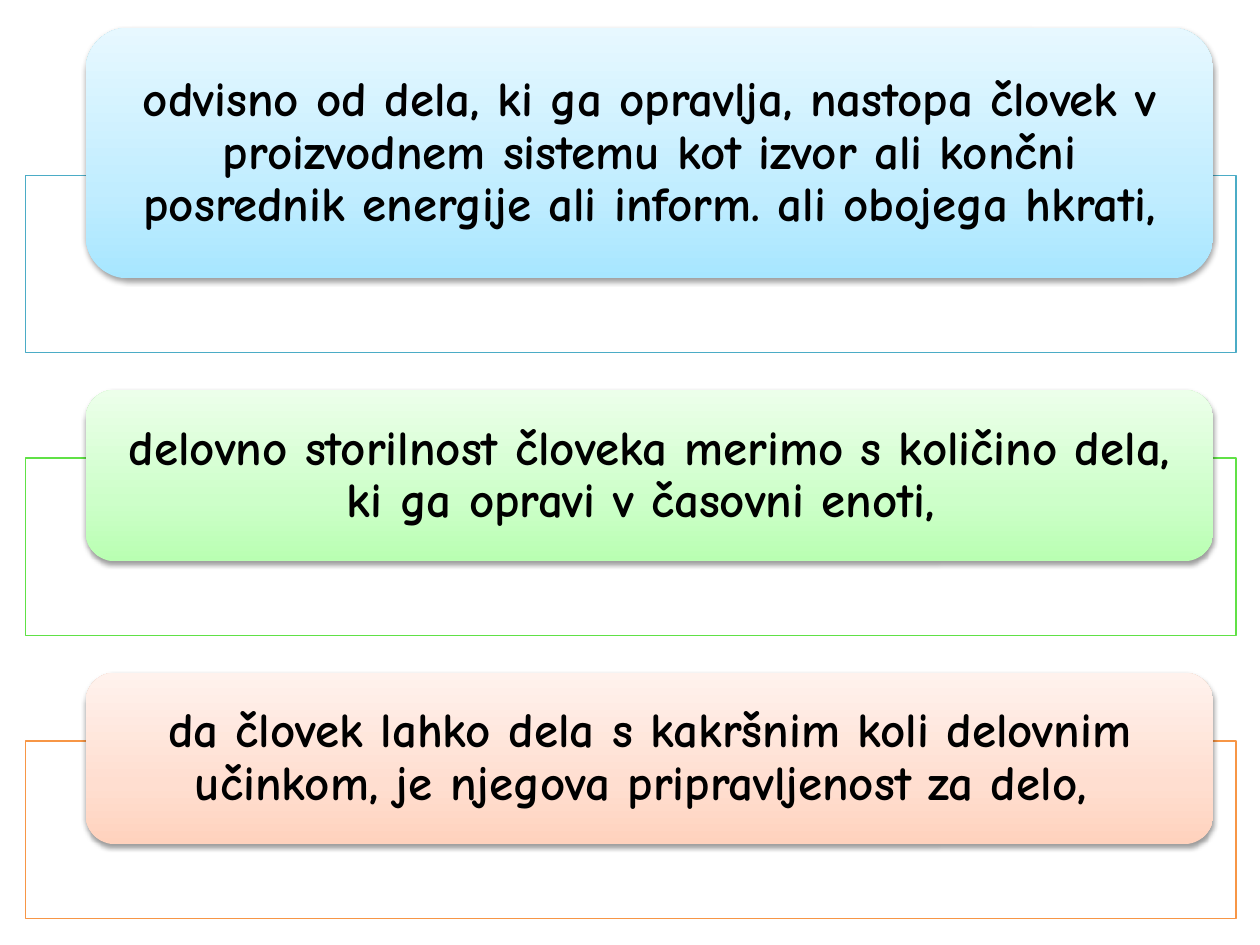
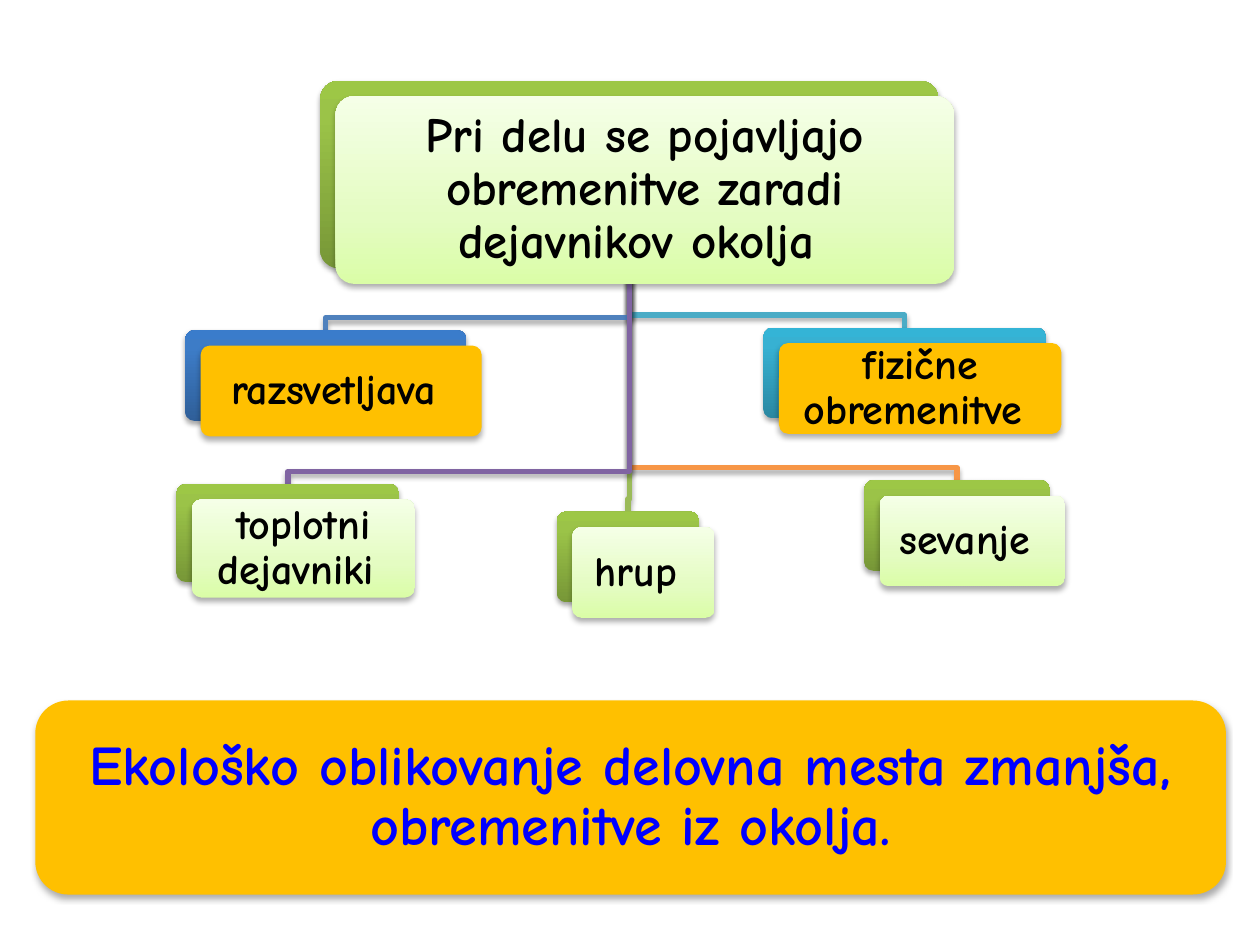
from dataclasses import dataclass
from typing import Optional, Union

import lxml.etree
import pptx
import pptx.dml.color
import pptx.enum.shapes
import pptx.enum.text
import pptx.oxml.ns
import pptx.util

WIDTH, HEIGHT = pptx.util.Inches(10), pptx.util.Inches(7.5)
COLUMN, ROW = WIDTH / 100, HEIGHT / 75
FONT = "Comic Neue"
BLACK, BLUE, WHITE, AMBER = "000000", "0000FF", "FFFFFF", "FFC000"
DEFAULT_CORNER, NODE_CORNER = 0.17, 0.1


@dataclass(frozen=True)
class Box:
    left: float
    top: float
    width: float
    height: float

    @property
    def bottom(self) -> float:
        return self.top + self.height

    @property
    def center(self) -> float:
        return self.left + self.width / 2

    def moved(self, step: float) -> "Box":
        return Box(self.left + step, self.top + step, self.width, self.height)


@dataclass(frozen=True)
class Gradient:
    bottom: str
    middle: str
    top: str
    middle_at: int = 35


@dataclass(frozen=True)
class Shadow:
    opacity: int
    blur: float
    distance: float


@dataclass(frozen=True)
class Caption:
    words: str
    size: int
    side_inset: float
    end_inset: float
    color: str = BLACK


@dataclass(frozen=True)
class Statement:
    words: str
    height: float
    paint: Gradient
    frame_color: str


Paint = Union[str, Gradient]


@dataclass(frozen=True)
class Node:
    box: Box
    caption: Caption
    back: Gradient
    front: Paint
    branch_color: Optional[str] = None


STATEMENT_SHADOW = Shadow(38, 3.1, 1.6)
BACK_SHADOW = Shadow(35, 3.1, 1.8)
FRONT_SHADOW = Shadow(32, 3.5, 2.2)

GREEN_BACK = Gradient("779737", "9BC348", "9DC746", 80)
BLUE_BACK = Gradient("2F5F99", "3D7CC7", "3A7CCB", 80)
TEAL_BACK = Gradient("2A88A2", "37B1D2", "34B4D6", 80)
GREEN_FRONT = Gradient("DAFDA7", "E4FCC2", "F5FFE7")

STATEMENTS = [
    Statement("odvisno od dela, ki ga opravlja, nastopa človek v proizvodnem sistemu kot izvor "
              "ali končni posrednik energije ali inform. ali obojega hkrati,",
              19.9, Gradient("A7E6FF", "C1EDFF", "E7F8FF"), "4BACC6"),
    Statement("delovno storilnost človeka merimo s količino dela, ki ga opravi v časovni enoti, ",
              13.6, Gradient("B9FFB2", "CDFFC9", "ECFFEA"), "60E146"),
    Statement("da človek lahko dela s kakršnim koli delovnim učinkom, je njegova pripravljenost "
              "za delo, ",
              13.6, Gradient("FFD2BD", "FFDED0", "FFF2ED"), "F79646"),
]


def factor(words: str) -> Caption:
    return Caption(words, 24, 1, 1)


BURDENS = Node(Box(25.4, 6.4, 49.1, 14.9),
               Caption("Pri delu se pojavljajo obremenitve zaradi dejavnikov okolja ", 28, 1.2, 1.2),
               GREEN_BACK, GREEN_FRONT)
FACTORS = [
    Node(Box(14, 38.4, 17.7, 7.8), factor("toplotni dejavniki "), GREEN_BACK, GREEN_FRONT, "8064A2"),
    Node(Box(14.7, 26.2, 22.3, 7.2), factor("razsvetljava "), BLUE_BACK, AMBER, "4F81BD"),
    Node(Box(44.2, 40.6, 11.3, 7.2), factor("hrup "), GREEN_BACK, GREEN_FRONT, "9BBB59"),
    Node(Box(60.6, 26, 22.4, 7.2), factor("fizične obremenitve "), TEAL_BACK, AMBER, "4BACC6"),
    Node(Box(68.6, 38.1, 14.7, 7.2), factor("sevanje "), GREEN_BACK, GREEN_FRONT, "F79646"),
]
CONCLUSION = Caption("Ekološko oblikovanje delovna mesta zmanjša, obremenitve iz okolja.",
                     32, 1.3, 1.3, BLUE)


def rgb(value: str) -> pptx.dml.color.RGBColor:
    return pptx.dml.color.RGBColor.from_string(value)


def across(columns: float) -> int:
    return round(columns * COLUMN)


def down(rows: float) -> int:
    return round(rows * ROW)


def add_node(parent, tag: str, **attributes):
    return lxml.etree.SubElement(parent, pptx.oxml.ns.qn(tag),
                                 {key: str(value) for key, value in attributes.items()})


def paint_shape(shape, paint: Paint) -> None:
    if isinstance(paint, str):
        shape.fill.solid()
        shape.fill.fore_color.rgb = rgb(paint)
        return
    shape.fill.gradient()
    shape.fill.gradient_angle = 90
    stops = shape.element.spPr.find(".//" + pptx.oxml.ns.qn("a:gsLst"))
    for stop in list(stops):
        stops.remove(stop)
    for place, value in ((0, paint.bottom), (paint.middle_at, paint.middle), (100, paint.top)):
        add_node(add_node(stops, "a:gs", pos=place * 1000), "a:srgbClr", val=value)


def cast_shadow(shape, shadow: Shadow) -> None:
    shape.shadow.inherit = False
    effects = shape.element.spPr.find(pptx.oxml.ns.qn("a:effectLst"))
    outer = add_node(effects, "a:outerShdw", blurRad=pptx.util.Pt(shadow.blur),
                     dist=pptx.util.Pt(shadow.distance), dir=90 * 60000, rotWithShape=0)
    shade = add_node(outer, "a:srgbClr", val=BLACK)
    add_node(shade, "a:alpha", val=shadow.opacity * 1000)


def write_caption(shape, caption: Caption) -> None:
    frame = shape.text_frame
    frame.word_wrap = True
    frame.vertical_anchor = pptx.enum.text.MSO_ANCHOR.MIDDLE
    frame.margin_left = frame.margin_right = across(caption.side_inset)
    frame.margin_top = frame.margin_bottom = down(caption.end_inset)
    paragraph = frame.paragraphs[0]
    paragraph.alignment = pptx.enum.text.PP_ALIGN.CENTER
    paragraph.line_spacing = 0.9
    run = paragraph.add_run()
    run.text = caption.words
    run.font.name = FONT
    run.font.size = pptx.util.Pt(caption.size)
    run.font.bold = True
    run.font.color.rgb = rgb(caption.color)


def add_box(slide, kind, box: Box, paint: Paint):
    shape = slide.shapes.add_shape(kind, across(box.left), down(box.top),
                                   across(box.width), down(box.height))
    paint_shape(shape, paint)
    return shape


def add_card(slide, box: Box, paint: Paint, shadow: Shadow, corner: float,
             caption: Optional[Caption] = None) -> None:
    card = add_box(slide, pptx.enum.shapes.MSO_SHAPE.ROUNDED_RECTANGLE, box, paint)
    card.adjustments[0] = corner
    card.line.fill.background()
    cast_shadow(card, shadow)
    if caption:
        write_caption(card, caption)


def add_frame(slide, box: Box, line_color: str) -> None:
    frame = add_box(slide, pptx.enum.shapes.MSO_SHAPE.RECTANGLE, box, WHITE)
    frame.line.color.rgb = rgb(line_color)
    frame.line.width = pptx.util.Pt(0.75)
    frame.shadow.inherit = False


def add_branch(slide, root: Box, leaf: Box, color: str) -> None:
    bend = down(leaf.top - 1)
    trunk, end = across(root.center), across(leaf.center)
    outline = slide.shapes.build_freeform(trunk, down(root.bottom))
    outline.add_line_segments([(trunk, bend), (end, bend), (end, down(leaf.top))], close=False)
    branch = outline.convert_to_shape()
    branch.fill.background()
    branch.line.color.rgb = rgb(color)
    branch.line.width = pptx.util.Pt(3)
    cast_shadow(branch, BACK_SHADOW)


def add_tree_node(slide, node: Node) -> None:
    add_card(slide, node.box, node.back, BACK_SHADOW, NODE_CORNER)
    add_card(slide, node.box.moved(1.23), node.front, FRONT_SHADOW, NODE_CORNER, node.caption)


def build_statements(slide) -> None:
    top, overlap, gap = 2.2, 8.2, 2.95
    for statement in STATEMENTS:
        card = Box(6.8, top, 89.5, statement.height)
        frame = Box(2, card.bottom - overlap, 96.1, 14.1)
        add_frame(slide, frame, statement.frame_color)
        add_card(slide, card, statement.paint, STATEMENT_SHADOW, DEFAULT_CORNER,
                 Caption(statement.words, 28, 2.5, 0))
        top = frame.bottom + gap


def build_burdens(slide) -> None:
    for leaf in reversed(FACTORS):
        add_branch(slide, BURDENS.box, leaf.box, leaf.branch_color)
    for node in [BURDENS, *FACTORS]:
        add_tree_node(slide, node)
    add_card(slide, Box(2.8, 55.6, 94.5, 15.4), AMBER, FRONT_SHADOW, DEFAULT_CORNER, CONCLUSION)


def main() -> None:
    deck = pptx.Presentation()
    deck.slide_width, deck.slide_height = WIDTH, HEIGHT
    blank = deck.slide_layouts[6]
    for build in (build_statements, build_burdens):
        build(deck.slides.add_slide(blank))
    deck.save("out.pptx")


if __name__ == "__main__":
    main()
